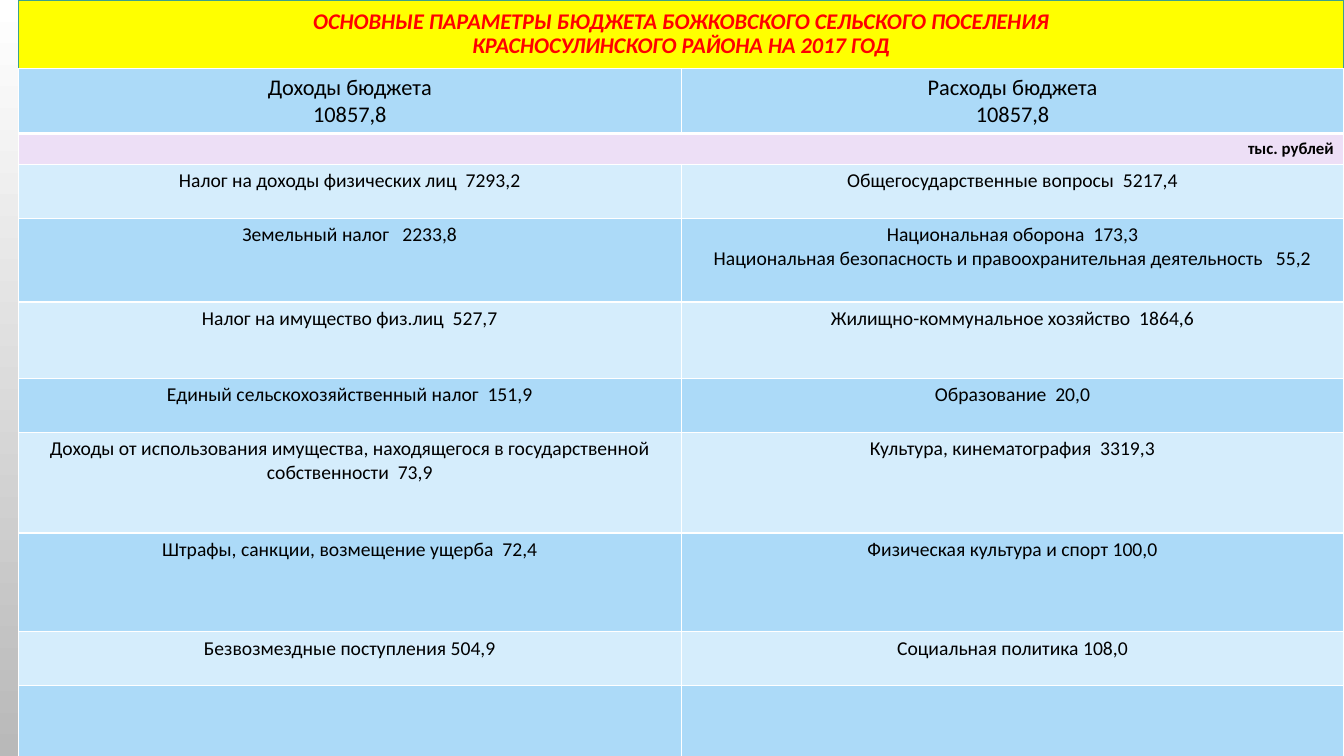
from pptx import Presentation
from pptx.dml.color import RGBColor
from pptx.enum.text import MSO_ANCHOR as Anchor, MSO_AUTO_SIZE as AutoSize, PP_ALIGN as Align
from pptx.oxml import parse_xml
from pptx.oxml.ns import nsdecls
from pptx.util import Pt


def color(code):
    return RGBColor.from_string(code)


def style_paragraph(para, size, code, align, bold=False, italic=False):
    para.alignment = align
    for span in para.runs:
        span.font.name = "Calibri"
        span.font.size = Pt(size)
        span.font.bold = bold
        span.font.italic = italic
        span.font.color.rgb = color(code)


LEFT, WIDTH, TITLE_HEIGHT = 13.2, 946.8, 49
DARK_BLUE, LIGHT_BLUE, LILAC = "ACDAF8", "D5EDFC", "EDDFF6"

# Row height, income text, expense text
budget_rows = [
    (44, "Доходы бюджета\n10857,8", "Расходы бюджета\n10857,8"),
    (21, "тыс. рублей", ""),
    (38.6, "Налог на доходы физических лиц  7293,2", "Общегосударственные вопросы  5217,4"),
    (60, "Земельный налог   2233,8",
     "Национальная оборона  173,3\n"
     "Национальная безопасность и правоохранительная деятельность   55,2"),
    (54.4, "Налог на имущество физ.лиц  527,7", "Жилищно-коммунальное хозяйство  1864,6"),
    (38.6, "Единый сельскохозяйственный налог  151,9", "Образование  20,0"),
    (72, "Доходы от использования имущества, находящегося в государственной собственности  73,9",
     "Культура, кинематография  3319,3"),
    (70.4, "Штрафы, санкции, возмещение ущерба  72,4", "Физическая культура и спорт 100,0"),
    (38.6, "Безвозмездные поступления 504,9", "Социальная политика 108,0"),
    (54.6, "", ""),
]

deck = Presentation()
deck.slide_width, deck.slide_height = Pt(960), Pt(540)
page = deck.slides.add_slide(deck.slide_layouts[5])

# Background: white at the top to grey at the bottom
backdrop = page.background.fill
backdrop.gradient()
backdrop.gradient_angle = 270
for stop, code, position in zip(backdrop.gradient_stops, ("FFFFFF", "B9B9B9"), (0, 1)):
    stop.color.rgb = color(code)
    stop.position = position

# Title
title = page.shapes.title
title.left, title.top, title.width, title.height = Pt(LEFT), Pt(0), Pt(WIDTH), Pt(TITLE_HEIGHT)
title.fill.solid()
title.fill.fore_color.rgb = color("FFFF00")
title.line.color.rgb = color("3CA28B")
title.line.width = Pt(0.75)
frame = title.text_frame
frame.text = ("ОСНОВНЫЕ ПАРАМЕТРЫ БЮДЖЕТА БОЖКОВСКОГО СЕЛЬСКОГО ПОСЕЛЕНИЯ\v"
              "КРАСНОСУЛИНСКОГО РАЙОНА НА 2017 ГОД")
frame.word_wrap = True
frame.auto_size = AutoSize.NONE
frame.vertical_anchor = Anchor.MIDDLE
frame.paragraphs[0].line_spacing = 0.9
style_paragraph(frame.paragraphs[0], 16, "FF0000", Align.CENTER, bold=True, italic=True)

# Budget table
table_height = sum(row[0] for row in budget_rows)
table = page.shapes.add_table(len(budget_rows), 2, Pt(LEFT), Pt(TITLE_HEIGHT),
                              Pt(WIDTH), Pt(table_height)).table
table.first_row = table.horz_banding = False
for column in table.columns:
    column.width = Pt(WIDTH / 2)
table.cell(1, 0).merge(table.cell(1, 1))

for index, (height, *texts) in enumerate(budget_rows):
    table.rows[index].height = Pt(height)
    is_units = index == 1
    size = {0: 16, 1: 12}.get(index, 14)
    fill = LILAC if is_units else DARK_BLUE if index == 0 or index % 2 else LIGHT_BLUE
    for cell, text in zip(table.rows[index].cells, texts):
        # White borders, heavier under the totals
        properties = cell._tc.get_or_add_tcPr()
        for side in "LRTB":
            width = Pt(3 if index == 0 and side == "B" else 1)
            properties.append(parse_xml(
                f'<a:ln{side} {nsdecls("a")} w="{width}"><a:solidFill>'
                f'<a:srgbClr val="FFFFFF"/></a:solidFill></a:ln{side}>'))
        cell.fill.solid()
        cell.fill.fore_color.rgb = color(fill)
        if text:
            cell.text_frame.text = text
        for para in cell.text_frame.paragraphs:
            style_paragraph(para, size, "000000",
                            Align.RIGHT if is_units else Align.CENTER, bold=is_units)

deck.save("out.pptx")
